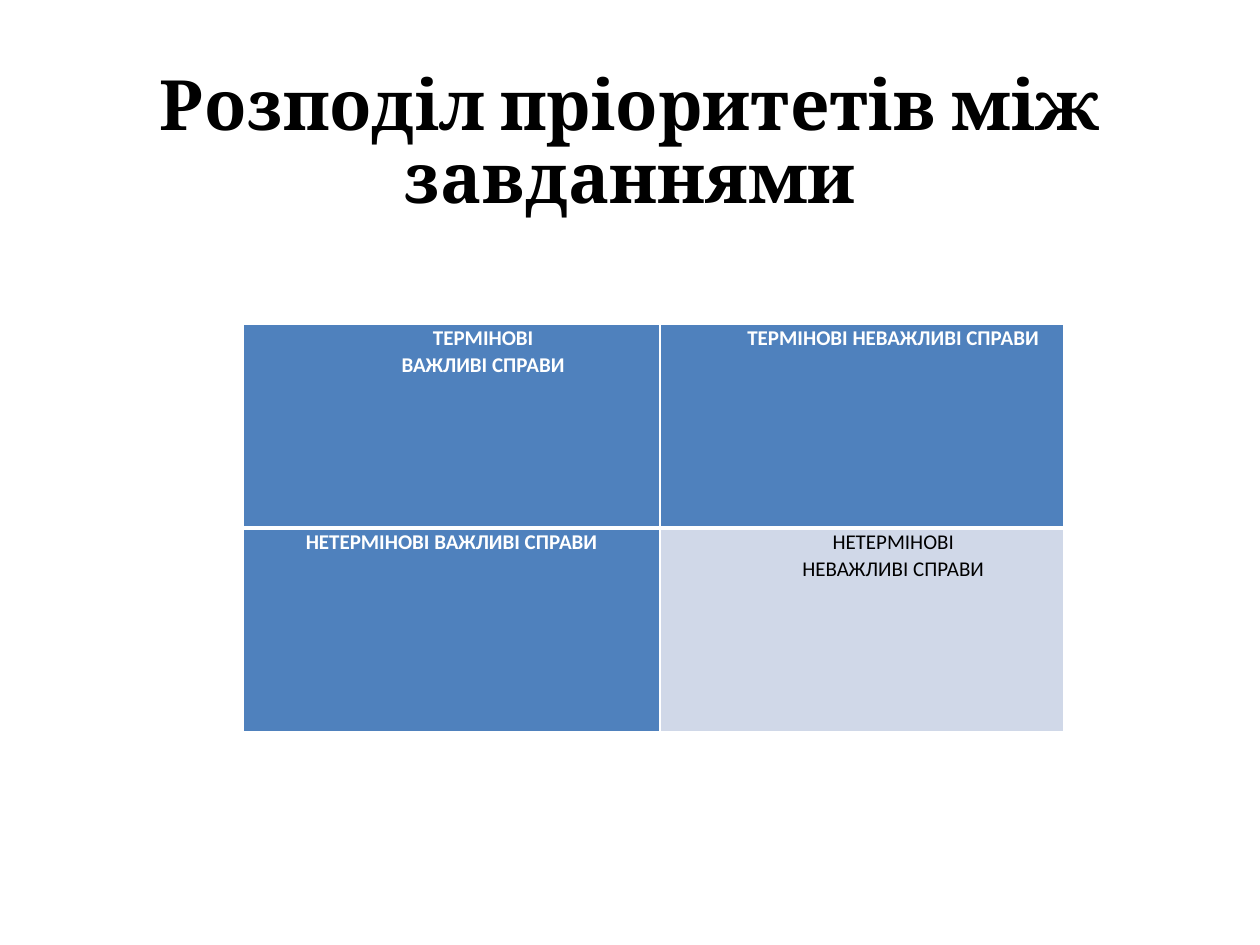
import pptx
import pptx.dml.color
import pptx.enum.text
import pptx.oxml
import pptx.oxml.ns
import pptx.util

Inches = pptx.util.Inches
Pt = pptx.util.Pt
CENTER = pptx.enum.text.PP_ALIGN.CENTER
MIDDLE = pptx.enum.text.MSO_ANCHOR.MIDDLE


def color(value):
    return pptx.dml.color.RGBColor.from_string(value)


def apply(target, values):
    for name, value in values.items():
        setattr(target, name, value)


class PriorityPage:
    black, white, blue, pale = "000000", "FFFFFF", "4F81BD", "D0D8E8"
    title_font = {"name": "Cambria", "size": Pt(39.6), "bold": True}
    cell_font = {"name": "Calibri", "size": Pt(12)}

    def __init__(self, deck):
        self.page = deck.slides.add_slide(deck.slide_layouts[6])

    def line(self, para, text, font, ink, spacing):
        apply(para, {"alignment": CENTER, "line_spacing": spacing})
        span = para.add_run()
        span.text = text
        apply(span.font, font)
        span.font.color.rgb = color(ink)

    def title(self, text, left, top, width, height):
        box = self.page.shapes.add_textbox(
            Inches(left), Inches(top), Inches(width), Inches(height))
        frame = box.text_frame
        apply(frame, {"word_wrap": True, "vertical_anchor": MIDDLE,
                      "margin_bottom": Inches(0.62)})
        self.line(frame.paragraphs[0], text, self.title_font, self.black, 0.88)

    def border(self, cell, widths):
        properties = cell._tc.get_or_add_tcPr()
        for side, width in widths.items():
            properties.append(pptx.oxml.parse_xml(
                f'<a:ln{side} {pptx.oxml.ns.nsdecls("a")} w="{Pt(width)}">'
                f'<a:solidFill><a:srgbClr val="{self.white}"/></a:solidFill>'
                f'</a:ln{side}>'))

    def cell(self, cell, lines, indent, fill, ink, bold):
        apply(cell, {"margin_left": Inches(0.07), "margin_right": Inches(0.07),
                     "margin_top": 0, "margin_bottom": 0})
        cell.fill.solid()
        cell.fill.fore_color.rgb = color(fill)
        frame = cell.text_frame
        for index, text in enumerate(lines):
            para = frame.add_paragraph() if index else frame.paragraphs[0]
            para._p.get_or_add_pPr().set("marL", str(Inches(indent)))
            self.line(para, text, {**self.cell_font, "bold": bold}, ink, 1.06)

    def matrix(self, rows, left, top, widths, row_height):
        table = self.page.shapes.add_table(
            len(rows), len(widths), Inches(left), Inches(top),
            Inches(sum(widths)), Inches(row_height * len(rows))).table
        apply(table, {"first_row": False, "horz_banding": False})
        for column, width in zip(table.columns, widths):
            column.width = Inches(width)
        for row_index, row in enumerate(rows):
            table.rows[row_index].height = Inches(row_height)
            edges = {"L": 1, "R": 1, "T": 3 if row_index else 1,
                     "B": 1 if row_index else 3}
            for column_index, content in enumerate(row):
                cell = table.cell(row_index, column_index)
                self.border(cell, edges)
                self.cell(cell, *content)


def main():
    deck = pptx.Presentation()
    apply(deck, {"slide_width": Inches(10), "slide_height": Inches(7.5)})
    page = PriorityPage(deck)
    page.title("Розподіл пріоритетів між завданнями", 0.5, 0.3, 9, 2.27)
    strong = (page.blue, page.white, True)
    light = (page.pale, page.black, False)
    page.matrix([
        [(["ТЕРМІНОВІ", "ВАЖЛИВІ СПРАВИ"], 0.5, *strong),
         (["ТЕРМІНОВІ НЕВАЖЛИВІ СПРАВИ"], 0.5, *strong)],
        [(["НЕТЕРМІНОВІ ВАЖЛИВІ СПРАВИ"], 0, *strong),
         (["НЕТЕРМІНОВІ", "НЕВАЖЛИВІ СПРАВИ"], 0.5, *light)],
    ], 1.93, 2.57, [3.31, 3.2], 1.62)
    deck.save("out.pptx")


if __name__ == "__main__":
    main()
